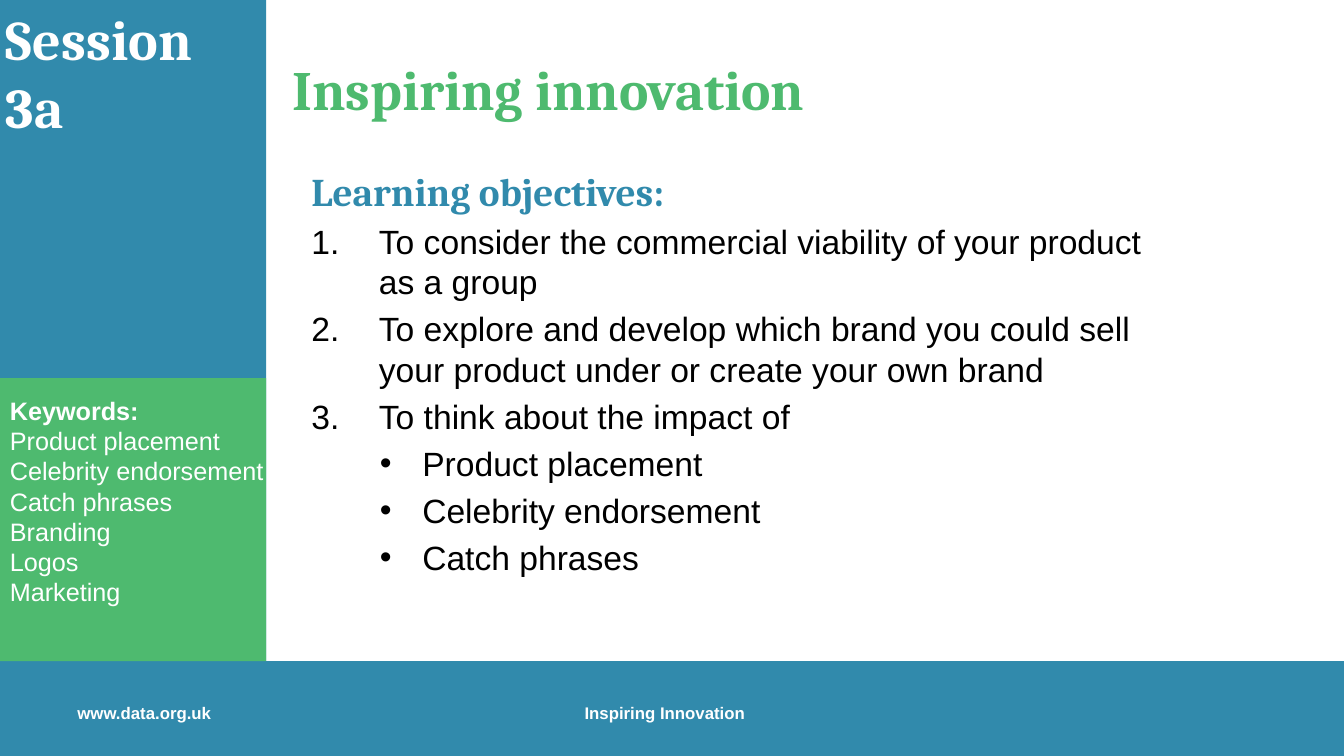
"""Builds the session slide with its objectives, keywords and footer."""
from dataclasses import dataclass

from lxml import etree
from pptx import Presentation
from pptx import util as u
from pptx.dml.color import RGBColor
from pptx.enum import shapes, text
from pptx.oxml.ns import qn

BLUE, GREEN, WHITE, BLACK = "318AAC", "4EBA6F", "FFFFFF", "000000"
SLIDE_WIDTH, SLIDE_HEIGHT = 13.33, 7.5
SIDEBAR_WIDTH, KEYWORDS_TOP, FOOTER_TOP = 2.64, 3.75, 6.56


@dataclass(frozen=True)
class Box:
    left: float
    top: float
    width: float
    height: float


@dataclass(frozen=True)
class Style:
    size: float
    color: str
    font: str = "Arial"
    bold: bool = False


@dataclass(frozen=True)
class Line:
    words: str
    style: Style
    margin: float = 0
    indent: float = 0
    bullet: str = ""
    space_before: float = 0


def rgb(color: str) -> RGBColor:
    return RGBColor.from_string(color)


def place(shape, box: Box) -> None:
    shape.left, shape.top = u.Inches(box.left), u.Inches(box.top)
    shape.width, shape.height = u.Inches(box.width), u.Inches(box.height)


def format_paragraph(paragraph, line: Line) -> None:
    paragraph.alignment = text.PP_ALIGN.LEFT
    paragraph.space_before = u.Pt(line.space_before)
    properties = paragraph._p.get_or_add_pPr()
    properties.set("marL", str(u.Inches(line.margin)))
    properties.set("indent", str(u.Inches(line.indent)))
    if line.bullet == "number":
        etree.SubElement(properties, qn("a:buFont"), typeface="+mj-lt")
        etree.SubElement(properties, qn("a:buAutoNum"), type="arabicPeriod")
    elif line.bullet:
        etree.SubElement(properties, qn("a:buFont"), typeface="Arial")
        etree.SubElement(properties, qn("a:buChar"), char=line.bullet)
    else:
        etree.SubElement(properties, qn("a:buNone"))


def write(shape, lines: list[Line], left: float = 0.1, top: float = 0.05, right: float = 0.1) -> None:
    frame = shape.text_frame
    frame.word_wrap = True
    frame.auto_size = text.MSO_AUTO_SIZE.NONE
    frame.vertical_anchor = text.MSO_ANCHOR.TOP
    frame.margin_left, frame.margin_right = u.Inches(left), u.Inches(right)
    frame.margin_top, frame.margin_bottom = u.Inches(top), u.Inches(0.05)
    for index, line in enumerate(lines):
        paragraph = frame.add_paragraph() if index else frame.paragraphs[0]
        format_paragraph(paragraph, line)
        run = paragraph.add_run()
        run.text = line.words
        run.font.name, run.font.size = line.style.font, u.Pt(line.style.size)
        run.font.bold = line.style.bold
        run.font.color.rgb = rgb(line.style.color)


def add_panel(slide, box: Box, color: str):
    panel = slide.shapes.add_shape(shapes.MSO_SHAPE.RECTANGLE, 0, 0, 0, 0)
    place(panel, box)
    panel.shadow.inherit = False
    panel.fill.solid()
    panel.fill.fore_color.rgb = rgb(color)
    panel.line.fill.background()
    return panel


def add_text(slide, box: Box, lines: list[Line], left: float = 0.1) -> None:
    textbox = slide.shapes.add_textbox(0, 0, 0, 0)
    place(textbox, box)
    write(textbox, lines, left)


def objective_lines() -> list[Line]:
    style = Style(24, BLACK)
    objectives = [
        "To consider the commercial viability of your product as a group",
        "To explore and develop which brand you could sell your product under or create your own brand",
        "To think about the impact of",
    ]
    impacts = ["Product placement", "Celebrity endorsement", "Catch phrases"]
    heading = Line("Learning objectives:", Style(28, BLUE, "Cambria", True), 0.67, -0.67)
    return (
        [heading]
        + [Line(words, style, 0.67, -0.67, "number", 4.8) for words in objectives]
        + [Line(words, style, 1.1, -0.42, "•", 4.8) for words in impacts]
    )


def keyword_lines() -> list[Line]:
    keywords = ["Product placement", "Celebrity endorsement", "Catch phrases", "Branding", "Logos", "Marketing"]
    heading = Line("Keywords:", Style(18, WHITE, bold=True))
    return [heading] + [Line(words, Style(18, WHITE)) for words in keywords]


def main() -> None:
    presentation = Presentation()
    presentation.slide_width = u.Inches(SLIDE_WIDTH)
    presentation.slide_height = u.Inches(SLIDE_HEIGHT)
    slide = presentation.slides.add_slide(presentation.slide_layouts[5])
    slide.background.fill.solid()
    slide.background.fill.fore_color.rgb = rgb(WHITE)

    title = slide.shapes.title
    place(title, Box(2.8, 0.5, 6.86, 0.75))
    write(title, [Line("Inspiring innovation", Style(39.6, GREEN, "Cambria", True))])

    add_panel(slide, Box(0, FOOTER_TOP, SLIDE_WIDTH, SLIDE_HEIGHT - FOOTER_TOP), BLUE)
    for left, words in ((0.67, "www.data.org.uk"), (5.7, "Inspiring Innovation")):
        add_text(slide, Box(left, 6.92, 2.27, 0.35), [Line(words, Style(12, WHITE, bold=True))])

    add_panel(slide, Box(0, 0, SIDEBAR_WIDTH, FOOTER_TOP), BLUE)
    add_text(slide, Box(2.99, 1.61, 8.76, 4.95), objective_lines())
    keywords = add_panel(slide, Box(0, KEYWORDS_TOP, SIDEBAR_WIDTH, FOOTER_TOP - KEYWORDS_TOP), GREEN)
    write(keywords, keyword_lines(), top=0.17, right=0)
    session = Line("Session 3a", Style(40, WHITE, "Cambria", True))
    add_text(slide, Box(0, 0, SIDEBAR_WIDTH, 1.45), [session], left=0.06)

    presentation.save("out.pptx")


if __name__ == "__main__":
    main()
